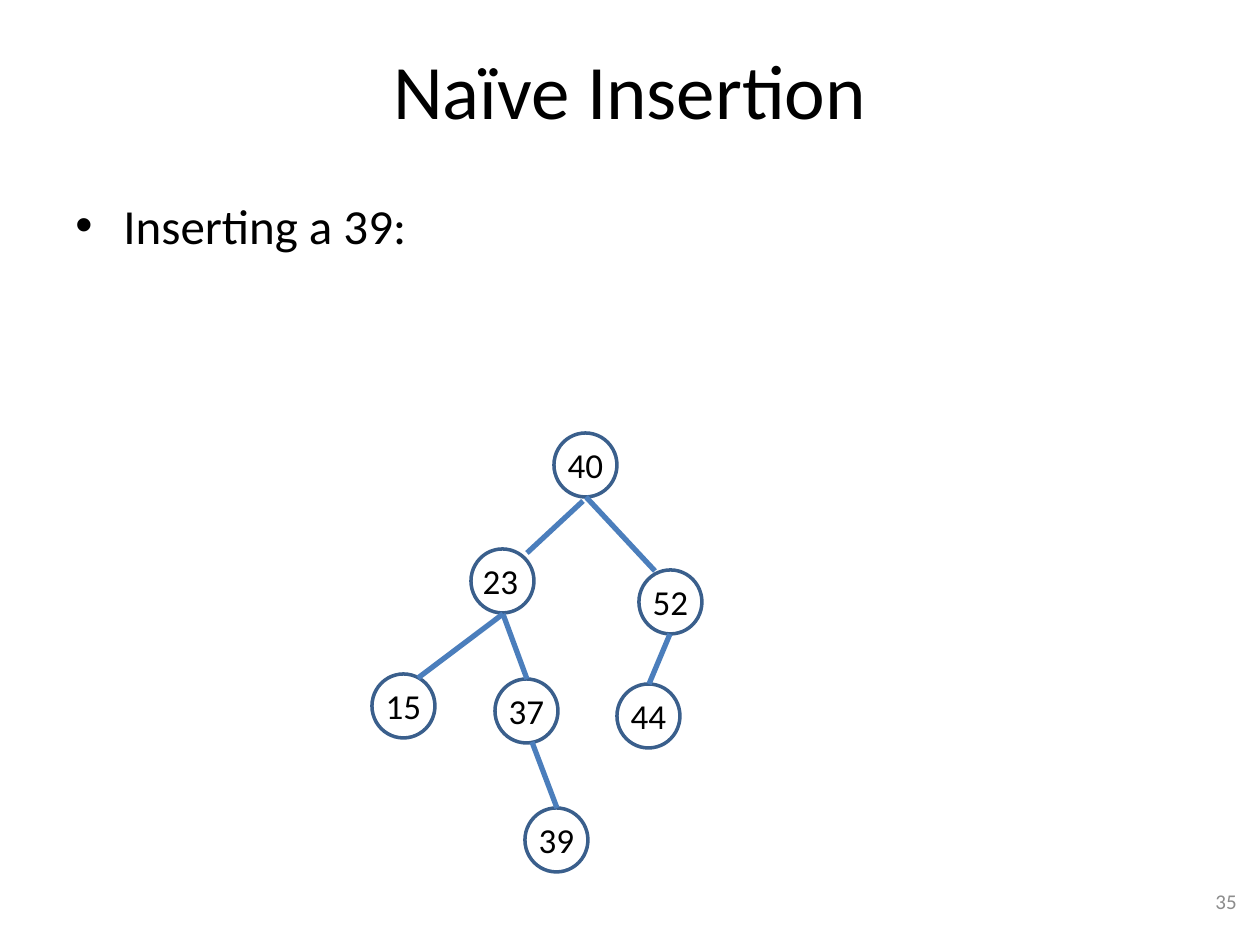
from lxml.etree import SubElement
from pptx import Presentation
from pptx.dml.color import RGBColor
from pptx.enum.shapes import MSO_CONNECTOR as Link, MSO_SHAPE as Shape
from pptx.enum.text import MSO_ANCHOR as Anchor, PP_ALIGN as Align
from pptx.oxml.ns import qn
from pptx.util import Emu, Pt

BLACK = RGBColor(0, 0, 0)
GREY = RGBColor(0x8C, 0x8C, 0x8C)
RING = RGBColor(0x3A, 0x5F, 0x8C)
EDGE = RGBColor(0x4B, 0x7E, 0xBC)
FONT = "Calibri"
NODE_W, NODE_H = 63, 64

NODES = [
    ("40", 554, 433, 0), ("23", 471, 549, -2), ("52", 639, 570, 0),
    ("15", 372, 674, 0), ("37", 495, 679, 0), ("44", 617, 684, 0),
    ("39", 525, 808, 0),
]
EDGES = [
    (583, 501, 527, 553), (586, 497, 655, 571), (527, 679, 503, 614),
    (503, 614, 418, 678), (670, 634, 649, 684), (557, 808, 532, 742),
]


def px(*vals):
    """Turn pixel lengths into EMU."""
    return [Emu(round(v * 914400 / 126)) for v in vals]


def add_text(slide, text, box, size, align, anchor=Anchor.TOP, color=BLACK, wrap=True):
    """Add a one-line text box and return its paragraph."""
    frame = slide.shapes.add_textbox(*px(*box)).text_frame
    frame.word_wrap = wrap
    frame.vertical_anchor = anchor
    para = frame.paragraphs[0]
    para.alignment = align
    run = para.add_run()
    run.text = text
    run.font.name = FONT
    run.font.size = Pt(size)
    run.font.color.rgb = color
    return para


def add_bullet(para, indent):
    """Give a paragraph a hanging round bullet."""
    props = para._p.get_or_add_pPr()
    gap = px(indent)[0]
    props.set("marL", str(gap))
    props.set("indent", str(-gap))
    SubElement(props, qn("a:buFont"), typeface="Arial")
    SubElement(props, qn("a:buChar"), char="•")


def add_node(slide, key, left, top, shift):
    """Draw a ringed tree node with its key."""
    ring = slide.shapes.add_shape(Shape.OVAL, *px(left, top, NODE_W, NODE_H))
    ring.shadow.inherit = False
    ring.fill.background()
    ring.line.color.rgb = RING
    ring.line.width = Pt(2)
    box = (left + shift, top + 4, NODE_W, 55)
    add_text(slide, key, box, 20, Align.CENTER, wrap=False)


def add_edge(slide, *ends):
    """Draw a straight tree edge."""
    edge = slide.shapes.add_connector(Link.STRAIGHT, *px(*ends))
    edge.line.color.rgb = EDGE
    edge.line.width = Pt(3)
    SubElement(edge._element.spPr, qn("a:effectLst"))


def main():
    """Build and save the slide."""
    deck = Presentation()
    deck.slide_width, deck.slide_height = px(1260, 945)
    slide = deck.slides.add_slide(deck.slide_layouts[6])
    add_text(slide, "Naïve Insertion", (63, 10, 1134, 158), 44, Align.CENTER, Anchor.MIDDLE)
    body = add_text(slide, "Inserting a 39:", (63, 189, 1134, 693), 28, Align.LEFT)
    add_bullet(body, 48)
    add_text(slide, "35", (955, 876, 294, 50), 12, Align.RIGHT, Anchor.MIDDLE, GREY)
    for node in NODES:
        add_node(slide, *node)
    for ends in EDGES:
        add_edge(slide, *ends)
    deck.save("out.pptx")


if __name__ == "__main__":
    main()
